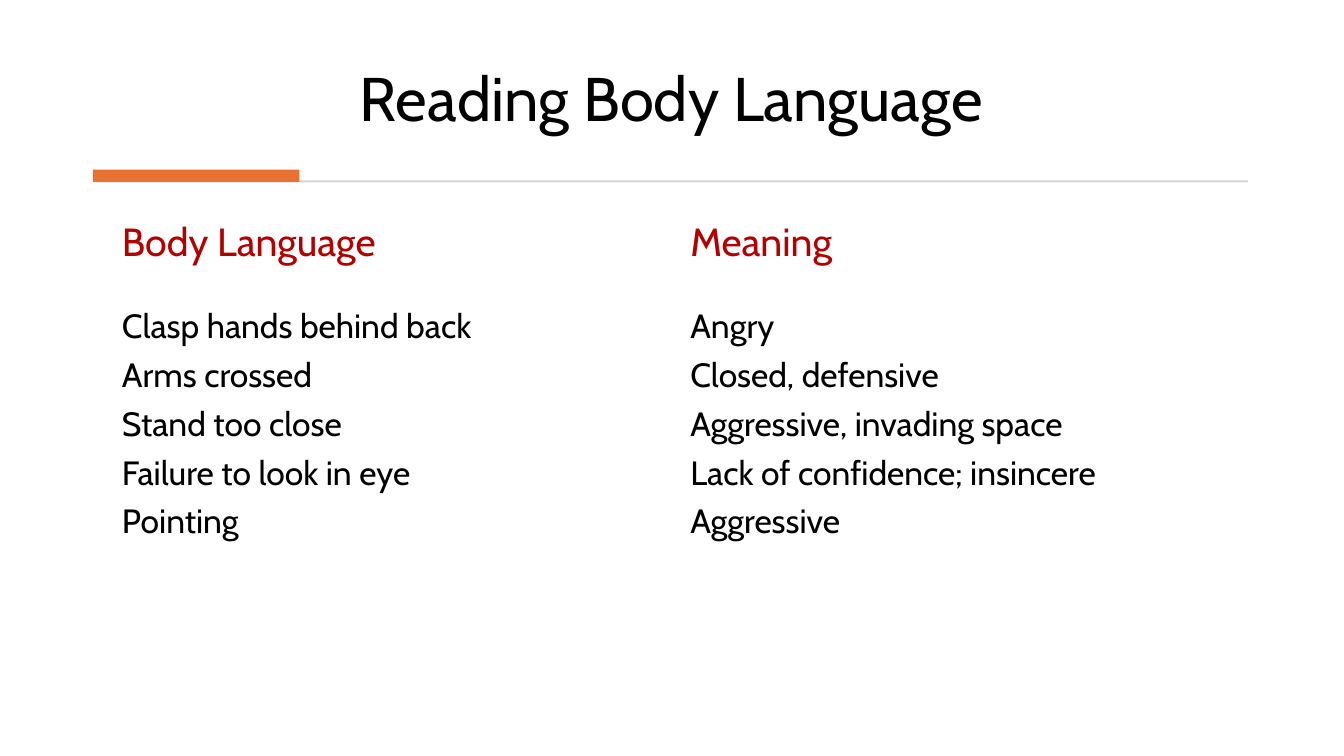
from dataclasses import dataclass

from pptx import Presentation
from pptx.dml.color import RGBColor
from pptx.enum import shapes, text
from pptx.util import Pt


@dataclass(frozen=True)
class Theme:
    font: str = "Cabin"
    ink: str = "000000"
    heading: str = "B30000"
    accent: str = "E97132"
    rule: str = "D5D5D5"
    title_size: int = 44
    heading_size: int = 28
    body_size: int = 24


def write_text(frame, lines, *, font, size, color, align=text.PP_ALIGN.LEFT,
               anchor=text.MSO_ANCHOR.TOP, space_after=0, line_spacing=1.0):
    """Fill a text frame with one paragraph per line."""
    frame.word_wrap = True
    frame.auto_size = text.MSO_AUTO_SIZE.NONE
    frame.vertical_anchor = anchor
    for index, line in enumerate(lines):
        paragraph = frame.add_paragraph() if index else frame.paragraphs[0]
        paragraph.alignment = align
        paragraph.space_after = Pt(space_after)
        paragraph.line_spacing = line_spacing
        run = paragraph.add_run()
        run.text = line
        run.font.name = font
        run.font.size = Pt(size)
        run.font.color.rgb = RGBColor.from_string(color)


class SlideBuilder:
    def __init__(self, slide, theme):
        self.slide = slide
        self.theme = theme

    def title(self, words, left, top, width, height):
        title = self.slide.shapes.title
        title.left, title.top = Pt(left), Pt(top)
        title.width, title.height = Pt(width), Pt(height)
        write_text(title.text_frame, [words], font=self.theme.font,
                   size=self.theme.title_size, color=self.theme.ink,
                   align=text.PP_ALIGN.CENTER, anchor=text.MSO_ANCHOR.BOTTOM,
                   line_spacing=0.9)

    def bar(self, left, top, width, height, color):
        bar = self.slide.shapes.add_shape(
            shapes.MSO_SHAPE.RECTANGLE, Pt(left), Pt(top), Pt(width), Pt(height))
        bar.shadow.inherit = False
        bar.fill.solid()
        bar.fill.fore_color.rgb = RGBColor.from_string(color)
        bar.line.fill.background()

    def text_box(self, lines, left, top, width, height, size, color):
        box = self.slide.shapes.add_textbox(
            Pt(left), Pt(top), Pt(width), Pt(height))
        write_text(box.text_frame, lines, font=self.theme.font, size=size,
                   color=color, space_after=6)

    def column(self, heading, entries, left, width):
        """Place a heading with its list of entries directly below."""
        top, heading_height, body_height = 152, 62.5, 280
        self.text_box([heading], left, top, width, heading_height,
                      self.theme.heading_size, self.theme.heading)
        self.text_box(entries, left, top + heading_height, width, body_height,
                      self.theme.body_size, self.theme.ink)


def main():
    presentation = Presentation()
    presentation.slide_width, presentation.slide_height = Pt(960), Pt(540)
    title_only = presentation.slide_layouts[5]
    theme = Theme()
    builder = SlideBuilder(presentation.slides.add_slide(title_only), theme)

    builder.title("Reading Body Language", 66, 20, 827.5, 80)
    builder.bar(68.5, 128.9, 823, 1.4, theme.rule)
    builder.bar(66.3, 121.2, 147.6, 8.8, theme.accent)

    signs = [
        ("Clasp hands behind back", "Angry"),
        ("Arms crossed", "Closed, defensive"),
        ("Stand too close", "Aggressive, invading space"),
        ("Failure to look in eye", "Lack of confidence; insincere"),
        ("Pointing", "Aggressive"),
    ]
    gestures, meanings = zip(*signs)
    builder.column("Body Language", gestures, 80, 392.5)
    builder.column("Meaning", meanings, 486, 394.5)

    presentation.save("out.pptx")


if __name__ == "__main__":
    main()
